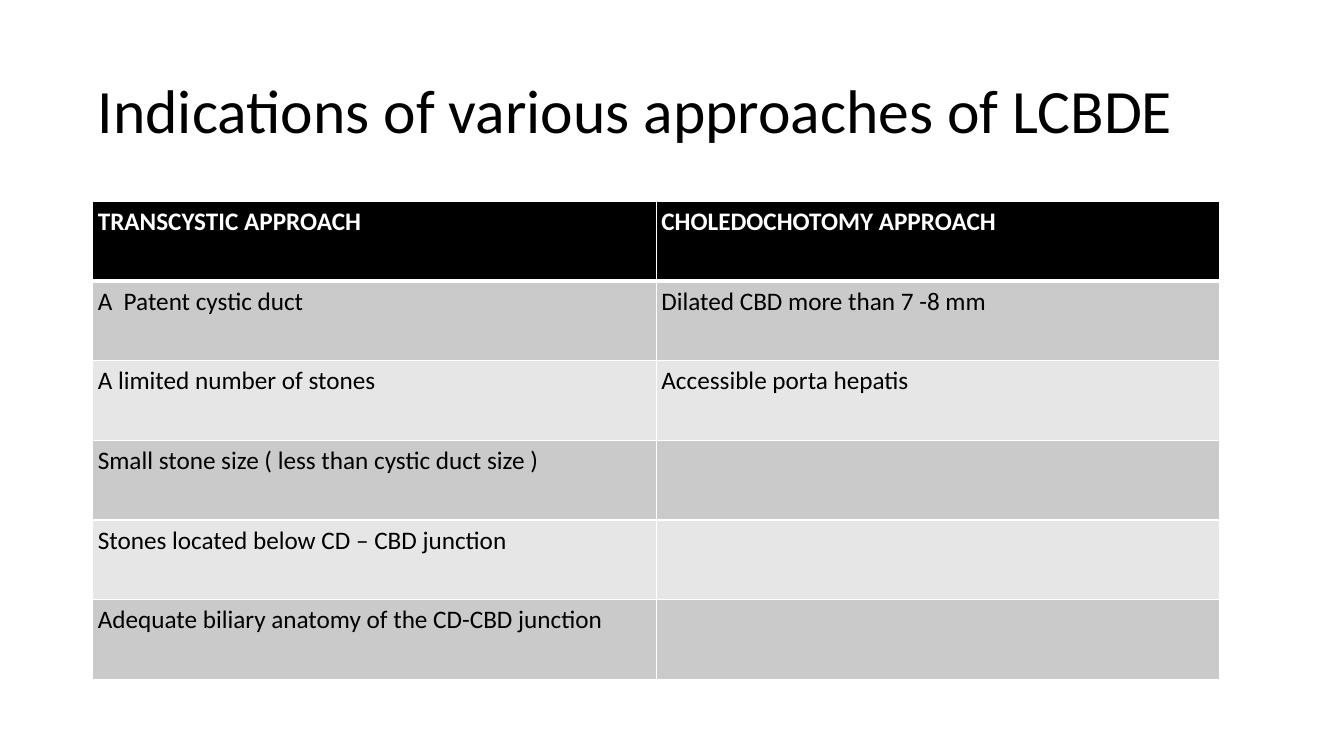
import pptx
import pptx.dml.color
import pptx.enum.text
import pptx.util
from pptx.oxml.ns import qn
from lxml import etree

EMU_PER_PX = 9144
FONT = "Calibri"
INSET = 5
HEADER_FILL = "000000"
BAND_FILLS = ("CACACA", "E6E6E6")
APPROACHES = [
    ("TRANSCYSTIC APPROACH", "CHOLEDOCHOTOMY APPROACH"),
    ("A  Patent cystic duct", "Dilated CBD more than 7 -8 mm"),
    ("A limited number of stones", "Accessible porta hepatis"),
    ("Small stone size ( less than cystic duct size )", ""),
    ("Stones located below CD – CBD junction", ""),
    ("Adequate biliary anatomy of the CD-CBD junction", ""),
]


def px(length):
    return pptx.util.Emu(length * EMU_PER_PX)


def color(hex_string):
    return pptx.dml.color.RGBColor.from_string(hex_string)


def format_text(paragraph, size, hex_string, bold=False):
    for run in paragraph.runs:
        run.font.name = FONT
        run.font.size = pptx.util.Pt(size)
        run.font.bold = bold
        run.font.color.rgb = color(hex_string)


def set_insets(holder):
    """Give a text frame or a table cell equal margins."""
    holder.margin_left = holder.margin_right = px(INSET)
    holder.margin_top = holder.margin_bottom = px(INSET)


def add_border(cell, side, points):
    properties = cell._tc.get_or_add_tcPr()
    line = etree.SubElement(properties, qn(f"a:ln{side}"), w=str(pptx.util.Pt(points)))
    fill = etree.SubElement(line, qn("a:solidFill"))
    etree.SubElement(fill, qn("a:srgbClr"), val="FFFFFF")


def fill_title(slide, text):
    title = slide.shapes.title
    title.left, title.top, title.width, title.height = px(92), px(40), px(1150), px(145)
    frame = title.text_frame
    frame.text = text
    frame.word_wrap = True
    frame.vertical_anchor = pptx.enum.text.MSO_ANCHOR.MIDDLE
    set_insets(frame)
    paragraph = frame.paragraphs[0]
    paragraph.alignment = pptx.enum.text.PP_ALIGN.LEFT
    paragraph.line_spacing = 0.9
    format_text(paragraph, 44, "000000")


def format_cell(cell, text, row):
    is_header = row == 0
    cell.text = text
    set_insets(cell)
    format_text(cell.text_frame.paragraphs[0], 18,
                "FFFFFF" if is_header else "000000", is_header)
    for side in "LRTB":
        below_header = (row, side) in ((0, "B"), (1, "T"))
        add_border(cell, side, 3 if below_header else 1)
    cell.fill.solid()
    cell.fill.fore_color.rgb = color(HEADER_FILL if is_header else BAND_FILLS[(row - 1) % 2])


def add_approach_table(slide, rows):
    frame = slide.shapes.add_table(len(rows), len(rows[0]), px(92), px(200), px(1118), px(474))
    table = frame.table
    for row, texts in enumerate(rows):
        for column, text in enumerate(texts):
            format_cell(table.cell(row, column), text, row)


def main():
    presentation = pptx.Presentation()
    presentation.slide_width, presentation.slide_height = px(1333), px(750)
    slide = presentation.slides.add_slide(presentation.slide_layouts[5])
    fill_title(slide, "Indications of various approaches of LCBDE")
    add_approach_table(slide, APPROACHES)
    presentation.save("out.pptx")


if __name__ == "__main__":
    main()
